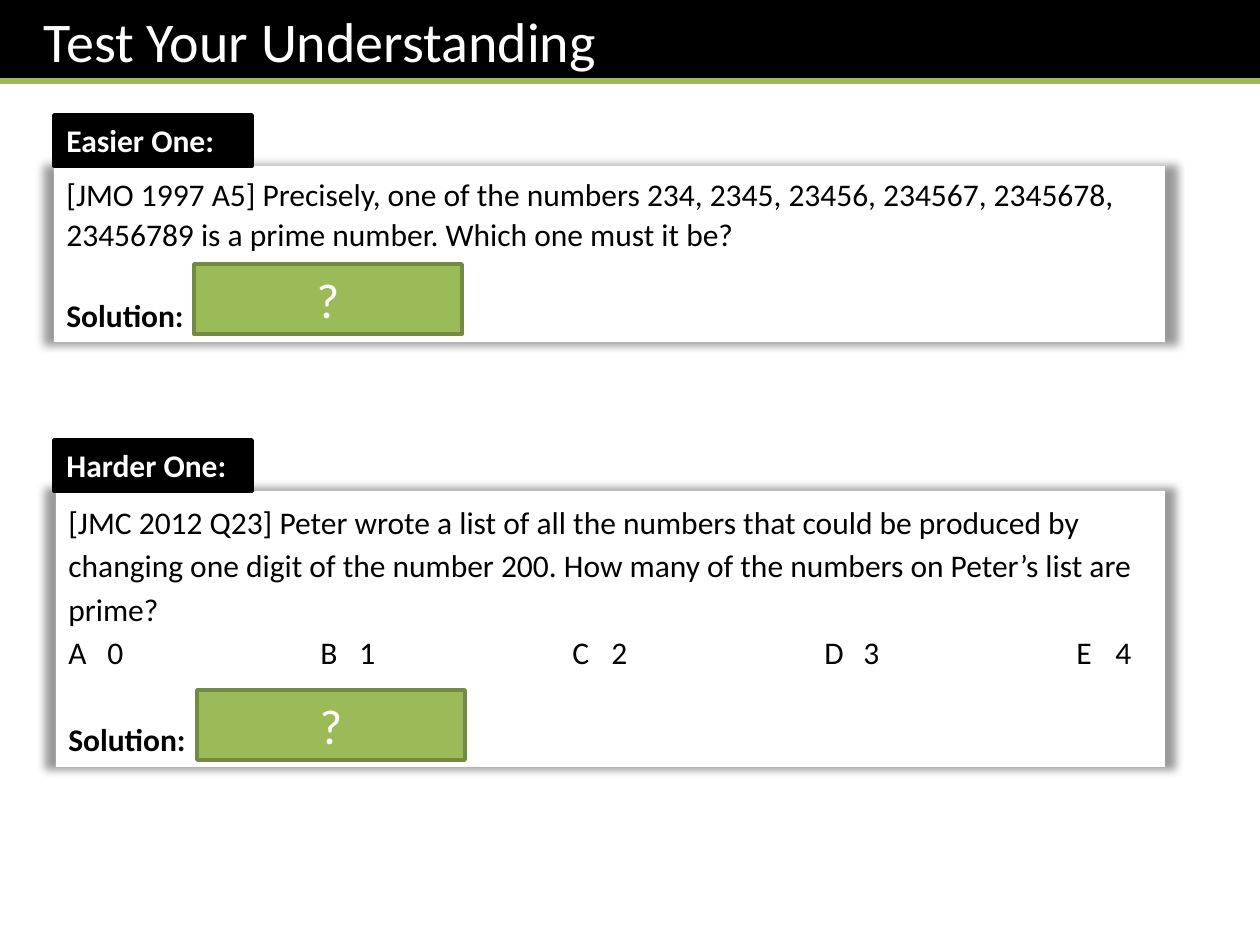
from dataclasses import dataclass

from lxml.etree import SubElement
from pptx import Presentation
from pptx.dml.color import RGBColor as Rgb
from pptx.enum.shapes import MSO_CONNECTOR as Link, MSO_SHAPE as Form
from pptx.enum.text import MSO_ANCHOR as Anchor, PP_ALIGN as Align
from pptx.oxml.ns import qn
from pptx.util import Emu, Pt

SCALE = 914400 / 126
FONT = "Calibri"
INK = {"black": "000000", "white": "FFFFFF", "green": "9BBB59", "moss": "738A42"}


@dataclass
class Box:
    left: int
    top: int
    width: int
    height: int


@dataclass
class Task:
    label: str
    head: Box
    body: Box
    cover: Box
    lines: list[str]
    pitch: float
    gap: float


TASKS = [
    Task("Easier One:", Box(54, 115, 198, 51), Box(54, 166, 1111, 176),
         Box(194, 264, 268, 70),
         ["[JMO 1997 A5] Precisely, one of the numbers 234, 2345, 23456, 234567, "
          "2345678, 23456789 is a prime number. Which one must it be?"],
         1.07, 23),
    Task("Harder One:", Box(54, 440, 198, 51), Box(56, 491, 1109, 276),
         Box(197, 690, 268, 70),
         ["[JMC 2012 Q23] Peter wrote a list of all the numbers that could be "
          "produced by changing one digit of the number 200. How many of the "
          "numbers on Peter’s list are prime?",
          "A\t0\tB\t1\tC\t2\tD\t3\tE\t4"],
         1.15, 25),
]


def px(size: int) -> Emu:
    return Emu(round(size * SCALE))


def tint(name: str) -> Rgb:
    return Rgb.from_string(INK[name])


def block(shapes, box: Box, fill: str, line: str | None = None):
    rect = shapes.add_shape(Form.RECTANGLE, px(box.left), px(box.top),
                            px(box.width), px(box.height))
    rect.shadow.inherit = False
    rect.fill.solid()
    rect.fill.fore_color.rgb = tint(fill)
    if line:
        rect.line.color.rgb = tint(line)
        rect.line.width = Pt(2)
    else:
        rect.line.fill.background()
    rect.text_frame.word_wrap = True
    rect.text_frame.vertical_anchor = Anchor.TOP
    return rect


def style(par, size: int, ink: str, bold: bool = False, align=Align.LEFT) -> None:
    par.alignment = align
    for run in par.runs:
        run.font.name = FONT
        run.font.size = Pt(size)
        run.font.bold = bold
        run.font.color.rgb = tint(ink)


def write(rect, text: str, size: int, bold: bool = False, align=Align.LEFT) -> None:
    rect.text_frame.text = text
    style(rect.text_frame.paragraphs[0], size, "white", bold, align)


def glow(rect) -> None:
    effects = rect._element.spPr.find(qn("a:effectLst"))
    shade = SubElement(effects, qn("a:outerShdw"), blurRad=str(Pt(5)),
                       sx="102000", sy="102000", algn="ctr", rotWithShape="0")
    color = SubElement(shade, qn("a:srgbClr"), val=INK["black"])
    SubElement(color, qn("a:alpha"), val="40000")


def add_tabs(par) -> None:
    tabs = SubElement(par._p.get_or_add_pPr(), qn("a:tabLst"))
    for col in range(5):
        for stop in (col * 252, col * 252 + 39):
            if stop:
                SubElement(tabs, qn("a:tab"), pos=str(px(stop)), algn="l")


def draw_title(shapes, text: str) -> None:
    group = shapes.add_group_shape().shapes
    bar = block(group, Box(0, 0, 1260, 83), "black")
    bar.text_frame.margin_left = px(44)
    write(bar, text, 32)
    rule = group.add_connector(Link.STRAIGHT, 0, px(81), px(1260), px(81))
    rule.line.color.rgb = tint("green")
    rule.line.width = Pt(3)
    SubElement(rule._element.spPr, qn("a:effectLst"))


def draw_task(shapes, task: Task) -> None:
    body = block(shapes, task.body, "white")
    glow(body)
    frame = body.text_frame
    frame.text = "\n".join([*task.lines, "Solution:"])
    *asks, reply = frame.paragraphs
    for par in frame.paragraphs:
        par.line_spacing = task.pitch
        par.space_after = Pt(0)
        style(par, 18, "black", bold=par._p is reply._p)
    reply.space_before = Pt(task.gap)
    for par in asks:
        if "\t" in par.text:
            add_tabs(par)

    write(block(shapes, task.head, "black", "black"), task.label, 18, bold=True)
    cover = block(shapes, task.cover, "green", "moss")
    cover.text_frame.vertical_anchor = Anchor.MIDDLE
    write(cover, "?", 28, align=Align.CENTER)


def main() -> None:
    """Build the slide with its title bar and two number tasks."""
    deck = Presentation()
    deck.slide_width, deck.slide_height = px(1260), px(945)
    shapes = deck.slides.add_slide(deck.slide_layouts[6]).shapes
    draw_title(shapes, "Test Your Understanding")
    for task in TASKS:
        draw_task(shapes, task)
    deck.save("out.pptx")


if __name__ == "__main__":
    main()
